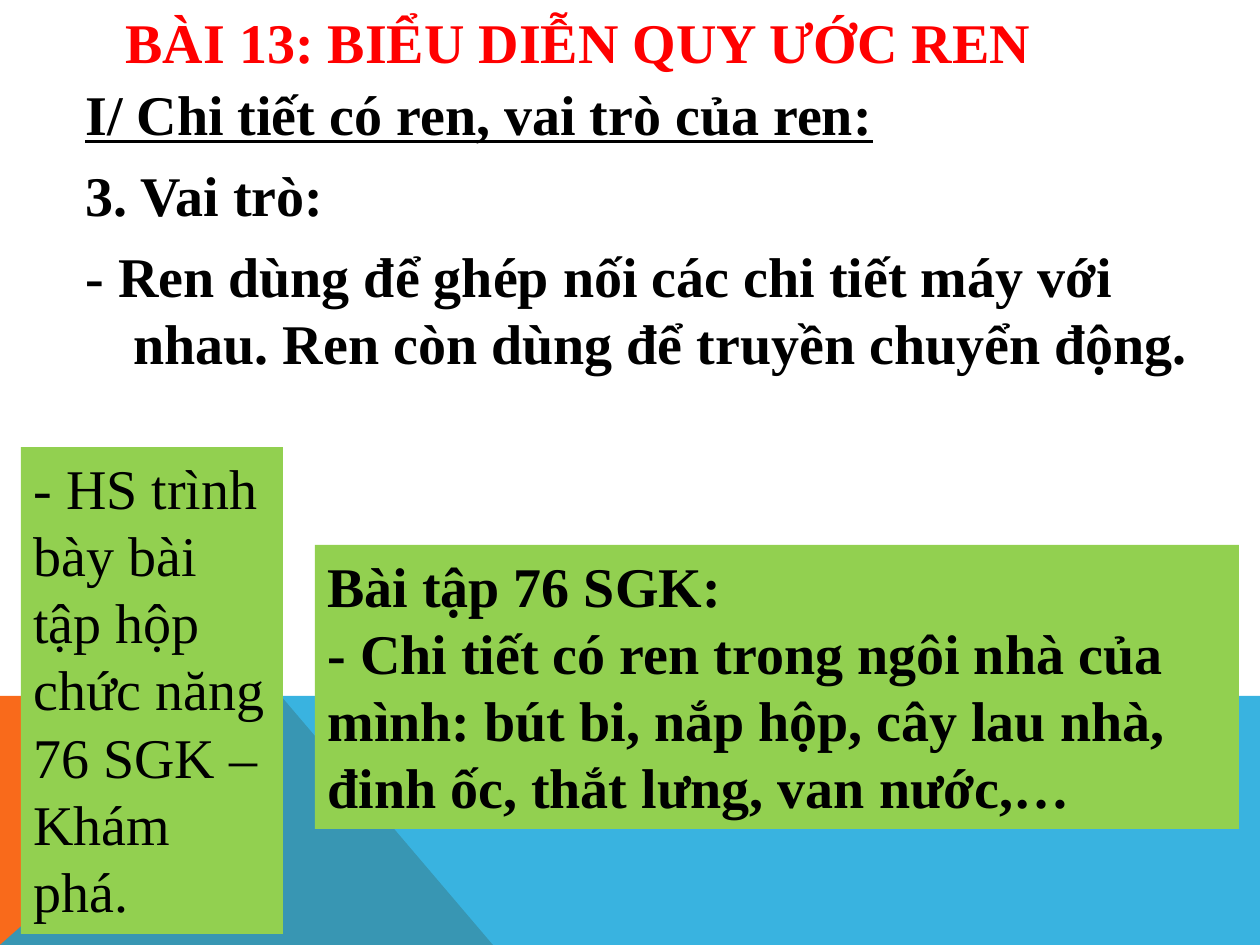
from pptx import Presentation
from pptx.dml.color import RGBColor
from pptx.enum.shapes import MSO_SHAPE as Shape
from pptx.enum.text import MSO_ANCHOR as Anchor, PP_ALIGN as Align
from pptx.oxml.ns import qn
from pptx.util import Emu, Pt
from lxml.etree import SubElement

PX = 914400 // 126
WIDE, HIGH = 1260, 945
BAND, FOLD, TIP = 696, 281, 493

TITLE = "BÀI 13: BIỂU DIỄN QUY ƯỚC REN"
BODY = [
    "I/ Chi tiết có ren, vai trò của ren:",
    "3. Vai trò:",
    "- Ren dùng để ghép nối các chi tiết máy với nhau. "
    "Ren còn dùng để truyền chuyển động.",
]
BANDS = [  # points, fill, opacity in percent
    ([(0, HIGH), (0, BAND), (FOLD, BAND), (TIP, HIGH)], "F96A1B", 100),
    ([(0, HIGH), (FOLD, BAND), (WIDE, BAND), (WIDE, HIGH)], "08A1D9", 80),
]
NOTES = [  # box, bold, paragraphs
    ((21, 447, 262, 487), False,
     ["- HS trình bày bài tập hộp chức năng 76 SGK – Khám phá."]),
    ((315, 545, 924, 284), True,
     ["Bài tập 76 SGK:",
      "- Chi tiết có ren trong ngôi nhà của mình: bút bi, nắp hộp, "
      "cây lau nhà, đinh ốc, thắt lưng, van nước,…"]),
]
FONT = {"name": "Times New Roman", "size": Pt(32)}


def px(*nums):
    return [Emu(n * PX) for n in nums]


def rgb(code):
    return RGBColor.from_string(code)


def paint(shape, code, alpha=100):
    shape.shadow.inherit = False
    shape.fill.solid()
    shape.fill.fore_color.rgb = rgb(code)
    shape.line.fill.background()
    if alpha < 100:
        tint = shape.fill._xPr.find(".//" + qn("a:srgbClr"))
        SubElement(tint, qn("a:alpha")).set("val", str(alpha * 1000))


def write(frame, lines, code="000000", bold=True):
    frame.word_wrap = True
    frame.vertical_anchor = Anchor.TOP
    for i, line in enumerate(lines):
        para = frame.paragraphs[0] if i == 0 else frame.add_paragraph()
        para.alignment = Align.LEFT
        run = para.add_run()
        run.text = line
        for key, val in {**FONT, "bold": bold}.items():
            setattr(run.font, key, val)
        run.font.color.rgb = rgb(code)


def main():
    deck = Presentation()
    deck.slide_width, deck.slide_height = px(WIDE, HIGH)
    slide = deck.slides.add_slide(deck.slide_layouts[5])
    shapes = slide.shapes

    for points, code, alpha in BANDS:
        pen = shapes.build_freeform(*points[0], scale=PX)
        pen.add_line_segments(points[1:], close=True)
        paint(pen.convert_to_shape(), code, alpha)

    title = shapes.title
    title.left, title.top, title.width, title.height = px(113, 7, 1036, 105)
    title.text_frame.margin_top = 0
    write(title.text_frame, [TITLE], "FF0000")

    body = shapes.add_textbox(*px(73, 73, 1144, 262)).text_frame
    write(body, BODY)
    hang = 48 * PX
    for i, para in enumerate(body.paragraphs):
        para.space_before = Pt(8 if i else 0)
        props = para._p.get_or_add_pPr()
        props.set("marL", str(hang))
        props.set("indent", str(-hang))
    body.paragraphs[0].runs[0].font.underline = True

    for box, bold, lines in NOTES:
        note = shapes.add_shape(Shape.RECTANGLE, *px(*box))
        paint(note, "92D050")
        write(note.text_frame, lines, bold=bold)

    deck.save("out.pptx")


if __name__ == "__main__":
    main()
